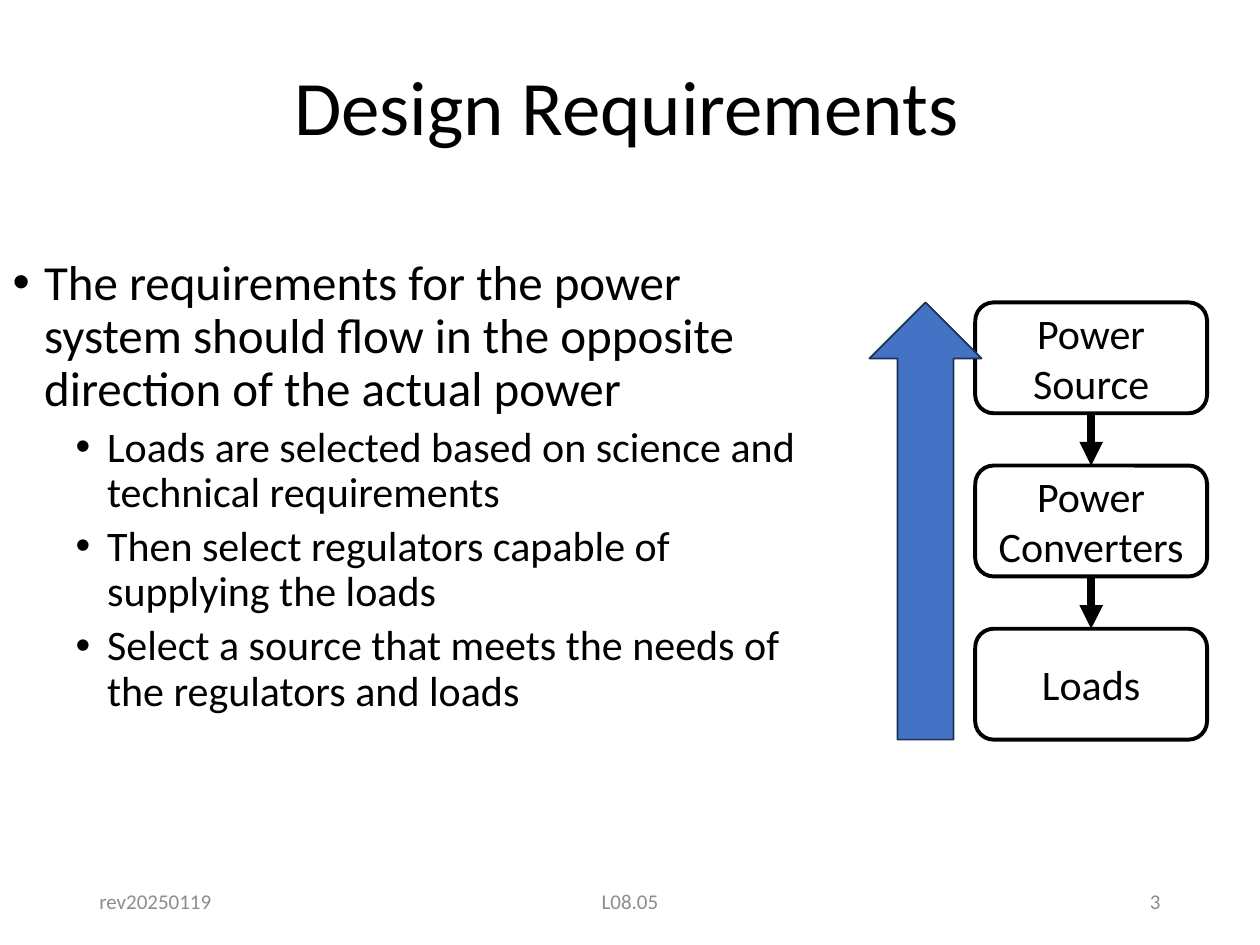
import itertools
from dataclasses import dataclass

import pptx
import pptx.dml.color
import pptx.enum.shapes
import pptx.enum.text
import pptx.oxml
import pptx.oxml.ns
import pptx.util
from lxml import etree

ALIGN = pptx.enum.text.PP_ALIGN
ANCHOR = pptx.enum.text.MSO_ANCHOR
SHAPES = pptx.enum.shapes.MSO_SHAPE


@dataclass(frozen=True)
class Theme:
    font: str = "Calibri"
    text: str = "000000"
    muted: str = "8C8C8C"
    paper: str = "FFFFFF"
    accent: str = "4472C4"
    accent_edge: str = "1E3256"
    title_size: int = 44
    list_sizes: tuple = (28, 24)
    list_gaps: tuple = (10, 5)
    box_size: int = 24
    footer_size: int = 12
    line_spacing: float = 0.9


class SlideBuilder:
    """Places elements on a grid of 100 columns by 75 rows."""

    columns, rows = 100, 75

    def __init__(self, presentation, theme):
        self.theme = theme
        self.column = presentation.slide_width / self.columns
        self.row = presentation.slide_height / self.rows
        self.slide = presentation.slides.add_slide(presentation.slide_layouts[1])

    def area(self, left, top, width, height):
        return (round(left * self.column), round(top * self.row),
                round(width * self.column), round(height * self.row))

    def place(self, shape, area):
        shape.left, shape.top, shape.width, shape.height = self.area(*area)

    def style(self, paragraph, size, color=None, align=ALIGN.LEFT):
        paragraph.alignment = align
        font = paragraph.font
        font.name, font.size = self.theme.font, pptx.util.Pt(size)
        font.color.rgb = pptx.dml.color.RGBColor.from_string(color or self.theme.text)

    def frame(self, shape, anchor):
        frame = shape.text_frame
        frame.word_wrap = True
        frame.auto_size = pptx.enum.text.MSO_AUTO_SIZE.NONE
        frame.vertical_anchor = anchor
        return frame

    def title(self, text, area):
        shape = self.slide.shapes.title
        self.place(shape, area)
        paragraph = self.frame(shape, ANCHOR.MIDDLE).paragraphs[0]
        paragraph.text = text
        paragraph.line_spacing = self.theme.line_spacing
        self.style(paragraph, self.theme.title_size, align=ALIGN.CENTER)

    def bullets(self, items, area):
        shape = self.slide.placeholders[1]
        self.place(shape, area)
        frame = self.frame(shape, ANCHOR.TOP)
        for index, (level, text) in enumerate(items):
            paragraph = frame.add_paragraph() if index else frame.paragraphs[0]
            paragraph.text = text
            paragraph.level = level
            properties = paragraph._p.get_or_add_pPr()
            properties.set("marL", str(pptx.util.Inches(0.25 + 0.5 * level)))
            properties.set("indent", str(-pptx.util.Inches(0.25)))
            etree.SubElement(properties, pptx.oxml.ns.qn("a:buFont"), typeface="Arial")
            etree.SubElement(properties, pptx.oxml.ns.qn("a:buChar"), char="•")
            paragraph.line_spacing = self.theme.line_spacing
            paragraph.space_before = pptx.util.Pt(self.theme.list_gaps[level] if index else 0)
            self.style(paragraph, self.theme.list_sizes[level])

    def shape(self, parent, kind, area, fill, line, weight):
        shape = parent.shapes.add_shape(kind, *self.area(*area))
        shape.shadow.inherit = False
        shape.fill.solid()
        shape.fill.fore_color.rgb = pptx.dml.color.RGBColor.from_string(fill)
        shape.line.color.rgb = pptx.dml.color.RGBColor.from_string(line)
        shape.line.width = pptx.util.Pt(weight)
        return shape

    def box(self, parent, text, area):
        shape = self.shape(parent, SHAPES.ROUNDED_RECTANGLE, area,
                           self.theme.paper, self.theme.text, 2.25)
        paragraph = self.frame(shape, ANCHOR.MIDDLE).paragraphs[0]
        paragraph.text = text
        self.style(paragraph, self.theme.box_size, align=ALIGN.CENTER)
        return shape

    def link(self, parent, upper, lower):
        connector = parent.shapes.add_connector(
            pptx.enum.shapes.MSO_CONNECTOR.STRAIGHT, 0, 0, 0, 0)
        connector.begin_connect(upper, 2)
        connector.end_connect(lower, 0)
        connector.line.width = pptx.util.Pt(4.5)
        connector.line.color.rgb = pptx.dml.color.RGBColor.from_string(self.theme.text)
        etree.SubElement(connector.line._get_or_add_ln(),
                         pptx.oxml.ns.qn("a:tailEnd"), type="triangle")
        etree.SubElement(connector._element.spPr, pptx.oxml.ns.qn("a:effectLst"))

    def chain(self, labels, left, top, width, height, pitch):
        group = self.slide.shapes.add_group_shape()
        boxes = [self.box(group, label, (left, top + index * pitch, width, height))
                 for index, label in enumerate(labels)]
        for upper, lower in itertools.pairwise(boxes):
            self.link(group, upper, lower)

    def upward_arrow(self, area):
        arrow = self.shape(self.slide, SHAPES.DOWN_ARROW, area,
                           self.theme.accent, self.theme.accent_edge, 1)
        arrow.rotation = 180

    def footer(self, text, left, width, align):
        shape = self.slide.shapes.add_textbox(*self.area(left, 69.5, width, 4))
        paragraph = self.frame(shape, ANCHOR.MIDDLE).paragraphs[0]
        paragraph.text = text
        self.style(paragraph, self.theme.footer_size, self.theme.muted, align)


def main():
    presentation = pptx.Presentation()
    presentation.slide_width = pptx.util.Inches(10)
    presentation.slide_height = pptx.util.Inches(7.5)
    builder = SlideBuilder(presentation, Theme())

    # Title and requirements list
    builder.title("Design Requirements", (17.6, 1.5, 64.3, 14.5))
    builder.bullets([
        (0, "The requirements for the power system should flow in the opposite "
            "direction of the actual power"),
        (1, "Loads are selected based on science and technical requirements"),
        (1, "Then select regulators capable of supplying the loads"),
        (1, "Select a source that meets the needs of the regulators and loads"),
    ], (0, 20, 65.7, 51))

    # Power flows down the chain, requirements flow up
    builder.chain(["Power Source", "Power Converters", "Loads"],
                  left=77.4, top=24, width=18.4, height=8.8, pitch=12.95)
    builder.upward_arrow((69, 24, 8.9, 34.7))

    # Footer
    builder.footer("rev20250119", 6.9, 22.5, ALIGN.LEFT)
    builder.footer("L08.05", 33.1, 33.8, ALIGN.CENTER)
    builder.footer("3", 70.6, 22.5, ALIGN.RIGHT)

    presentation.save("out.pptx")


if __name__ == "__main__":
    main()
